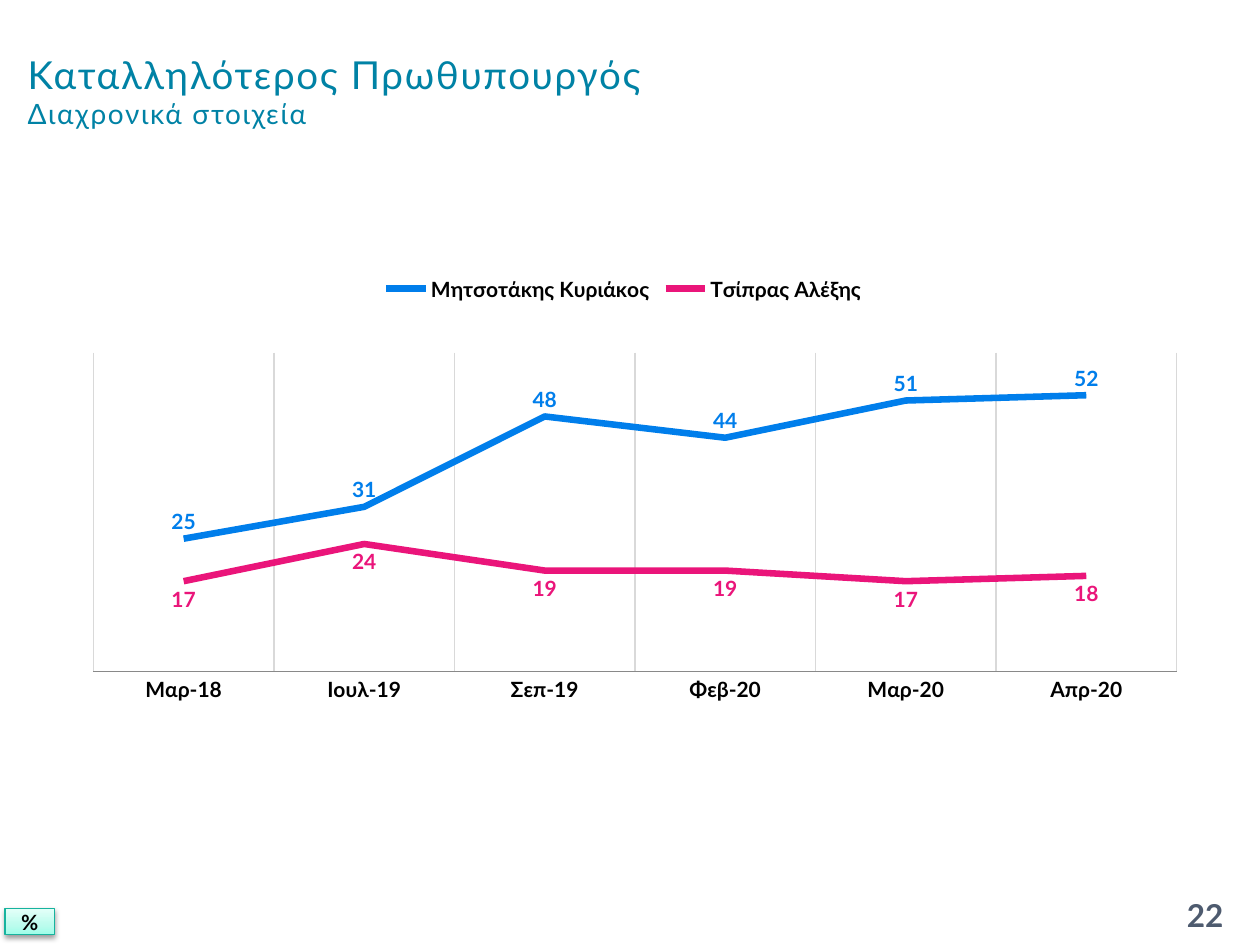
from copy import deepcopy
from dataclasses import dataclass

from pptx import Presentation
from pptx.chart.data import CategoryChartData
from pptx.dml.color import RGBColor
from pptx.enum.chart import XL_CHART_TYPE, XL_LABEL_POSITION, XL_LEGEND_POSITION, XL_TICK_MARK
from pptx.enum.shapes import MSO_SHAPE
from pptx.enum.text import MSO_ANCHOR, PP_ALIGN
from pptx.oxml import parse_xml
from pptx.oxml.ns import nsdecls, qn
from pptx.util import Inches, Pt


@dataclass(frozen=True)
class Theme:
    font: str = "Lato"
    title: str = "0082A5"
    number: str = "4E5B6F"
    text: str = "000000"
    grid: str = "D9D9D9"
    axis: str = "898989"
    badge_line: str = "16B39E"
    badge_stops: tuple = ((0, "9DFDE8"), (0.35, "BBFCED"), (1, "E4FFF9"))
    title_size: int = 22
    subtitle_size: int = 16
    number_size: int = 18
    small_size: int = 12


theme = Theme()


def style_font(font, size, color, bold=False):
    font.name = theme.font
    font.size = Pt(size)
    font.bold = bold
    font.color.rgb = RGBColor.from_string(color)


def set_layout(parent, position, x, y, w, h, target=""):
    """Place a chart part by fractions of the chart area."""
    for old in parent.findall(qn("c:layout")):
        parent.remove(old)
    parent.insert(position, parse_xml(
        f'<c:layout {nsdecls("c")}><c:manualLayout>{target}'
        '<c:xMode val="edge"/><c:yMode val="edge"/>'
        f'<c:x val="{x}"/><c:y val="{y}"/><c:w val="{w}"/><c:h val="{h}"/>'
        '</c:manualLayout></c:layout>'))


prs = Presentation()
prs.slide_width, prs.slide_height = Inches(10), Inches(7.5)
slide = prs.slides.add_slide(prs.slide_layouts[5])

# Title and subtitle
title = slide.shapes.title
title.left, title.top = Inches(0.12), Inches(0.13)
title.width, title.height = Inches(6.85), Inches(1.18)
title.text_frame.text = "Καταλληλότερος Πρωθυπουργός\vΔιαχρονικά στοιχεία"
title.text_frame.vertical_anchor = MSO_ANCHOR.MIDDLE
heading = title.text_frame.paragraphs[0]
heading.alignment = PP_ALIGN.LEFT
for run, size in zip(heading.runs, (theme.title_size, theme.subtitle_size)):
    style_font(run.font, size, theme.title)
    run.font._element.set("spc", "100")

# Suitability ratings over time
ratings = CategoryChartData(number_format="#,##0")
ratings.categories = ["Μαρ-18", "Ιουλ-19", "Σεπ-19", "Φεβ-20", "Μαρ-20", "Απρ-20"]
leaders = [
    ("Μητσοτάκης Κυριάκος", (25, 31, 48, 44, 51, 52), "007EEB", XL_LABEL_POSITION.ABOVE),
    ("Τσίπρας Αλέξης", (17, 24, 19, 19, 17, 18), "EA157A", XL_LABEL_POSITION.BELOW),
]
for name, values, _, _ in leaders:
    ratings.add_series(name, values)

chart = slide.shapes.add_chart(
    XL_CHART_TYPE.LINE, Inches(0.59), Inches(2.02), Inches(8.9), Inches(4.17), ratings
).chart
chart.has_title = False
style_font(chart.font, 18, theme.text)
chart.plots[0].vary_by_categories = False

for series, (_, _, color, label_position) in zip(chart.plots[0].series, leaders):
    series.smooth = False
    series.format.line.color.rgb = RGBColor.from_string(color)
    series.format.line.width = Pt(3.75)
    labels = series.data_labels
    labels.show_value = True
    labels.position = label_position
    labels.number_format = "#,##0"
    labels.number_format_is_linked = False
    style_font(labels.font, theme.small_size, color, bold=True)

months = chart.category_axis
months.major_tick_mark = XL_TICK_MARK.NONE
months.has_major_gridlines = True
months.major_gridlines.format.line.color.rgb = RGBColor.from_string(theme.grid)
months.major_gridlines.format.line.width = Pt(0.75)
months.format.line.color.rgb = RGBColor.from_string(theme.axis)
months.format.line.width = Pt(0.75)
style_font(months.tick_labels.font, theme.small_size, theme.text, bold=True)

percent = chart.value_axis
percent.minimum_scale, percent.maximum_scale, percent.major_unit = 0, 60, 10
percent.has_major_gridlines = False
percent.visible = False

chart.has_legend = True
chart.legend.position = XL_LEGEND_POSITION.BOTTOM
chart.legend.include_in_layout = False
style_font(chart.legend.font, theme.small_size, theme.text, bold=True)
set_layout(chart.legend._element, 1, 0.27, 0.03, 0.44, 0.07)
plot_area = chart._chartSpace.chart.plotArea
set_layout(plot_area, 0, 0.017, 0.187, 0.966, 0.607, '<c:layoutTarget val="inner"/>')

# Page number
page_number = slide.shapes.add_textbox(Inches(9.17), Inches(7.06), Inches(0.79), Inches(0.4))
page_number.text_frame.text = "22"

# Unit badge
badge = slide.shapes.add_shape(
    MSO_SHAPE.RECTANGLE, Inches(0.04), Inches(7.21), Inches(0.39), Inches(0.21))
badge.text_frame.text = "%"
badge.line.color.rgb = RGBColor.from_string(theme.badge_line)
badge.line.width = Pt(0.75)
badge.fill.gradient()
badge.fill.gradient_angle = 90
stop_list = badge._element.spPr.find(qn("a:gradFill")).find(qn("a:gsLst"))
stop_list.append(deepcopy(stop_list[-1]))
for stop, (position, color) in zip(badge.fill.gradient_stops, theme.badge_stops):
    stop.position = position
    stop.color.rgb = RGBColor.from_string(color)
badge.shadow.inherit = False
badge._element.spPr.find(qn("a:effectLst")).append(parse_xml(
    f'<a:outerShdw {nsdecls("a")} blurRad="{Pt(3.1)}" dist="{Pt(1.6)}" dir="5400000" '
    'rotWithShape="0"><a:srgbClr val="000000"><a:alpha val="38000"/></a:srgbClr></a:outerShdw>'))

for holder, size, color in ((page_number, theme.number_size, theme.number),
                            (badge, theme.small_size, theme.text)):
    frame = holder.text_frame
    frame.word_wrap = True
    frame.vertical_anchor = MSO_ANCHOR.MIDDLE
    frame.paragraphs[0].alignment = PP_ALIGN.CENTER
    style_font(frame.paragraphs[0].runs[0].font, size, color, bold=True)

prs.save("out.pptx")
